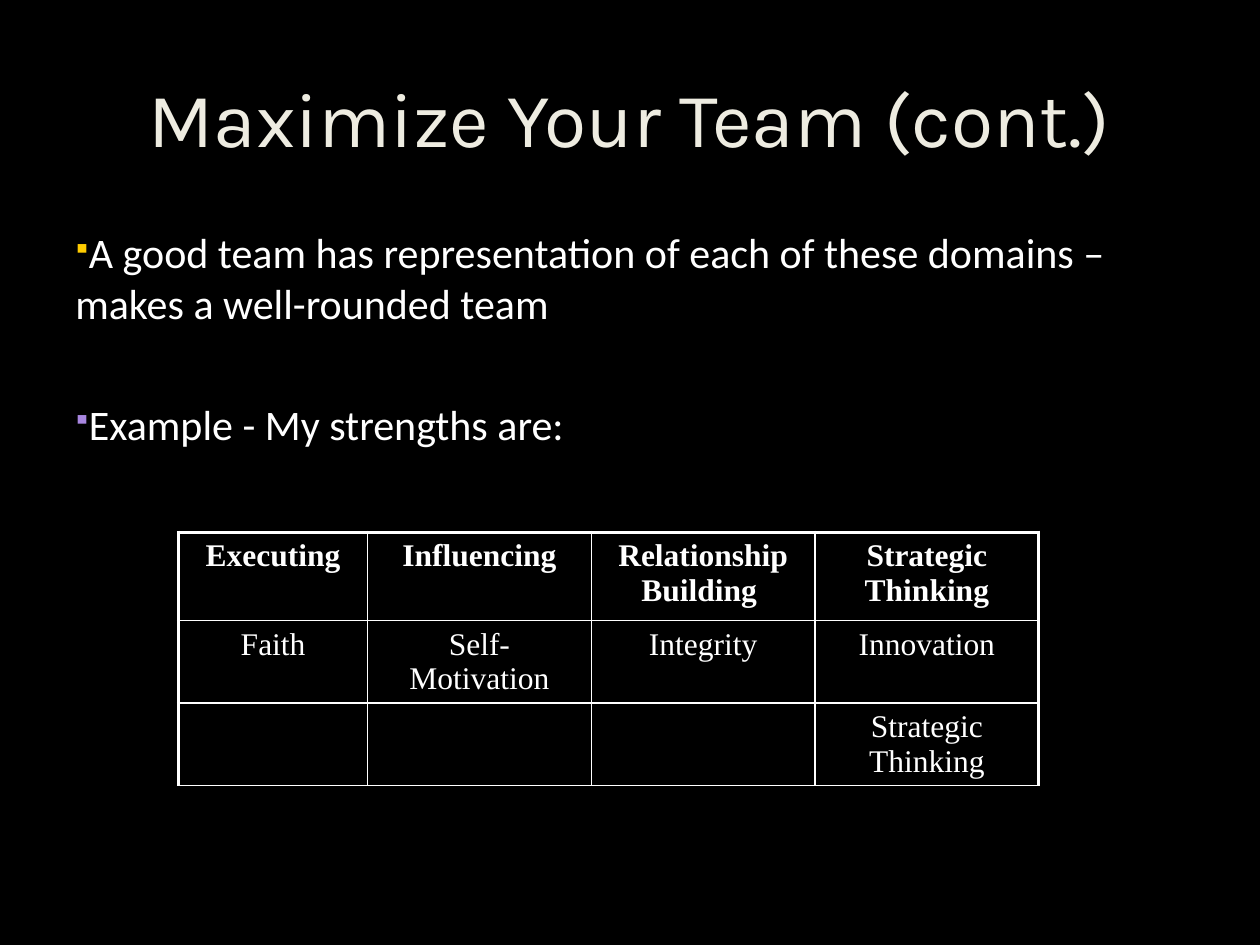
from lxml.etree import SubElement as Sub
from pptx import Presentation
from pptx.dml.color import RGBColor
from pptx.enum.text import MSO_ANCHOR as Anchor, PP_ALIGN as Align
from pptx.oxml.ns import qn
from pptx.util import Cm, Pt

BLACK = RGBColor(0, 0, 0)
WHITE = RGBColor(255, 255, 255)
CREAM = RGBColor(0xEE, 0xEC, 0xE1)
GOLD = RGBColor(0xFF, 0xCC, 0x00)
LILAC = RGBColor(0xA8, 0x86, 0xE0)

POINTS = [
    ("A good team has representation of each of these domains – makes a well-rounded team", GOLD, 0),
    ("Example - My strengths are:", LILAC, 40.5),
]
ROWS = [
    ["Executing", "Influencing", "Relationship Building ", "Strategic Thinking"],
    ["Faith", "Self-Motivation", "Integrity", "Innovation"],
    ["", "", "", "Strategic Thinking"],
]


class Deck:
    """Hold the style and the current slide, and add each kind of element."""

    def __init__(self):
        self.show = Presentation()
        self.show.slide_width, self.show.slide_height = Cm(25.4), Cm(19.05)
        self.slide = self.show.slides.add_slide(self.show.slide_layouts[6])
        fill = self.slide.background.fill
        fill.solid()
        fill.fore_color.rgb = BLACK

    def style(self, para, face, size, color, bold=False):
        for item in (para, *para.runs):
            font = item.font
            font.name, font.size, font.bold = face, Pt(size), bold
            font.color.rgb = color

    def box(self, left, top, width, height, anchor):
        x, y, right, base = Cm(left), Cm(top), Cm(left + width), Cm(top + height)
        pen = self.slide.shapes.build_freeform(x, y)
        pen.add_line_segments([(right, y), (right, base), (x, base)], close=True)
        shape = pen.convert_to_shape()
        shape.shadow.inherit = False
        shape.fill.background()
        shape.line.fill.background()
        frame = shape.text_frame
        frame.word_wrap = True
        frame.vertical_anchor = anchor
        return frame

    def title(self, text, *place):
        frame = self.box(*place, Anchor.MIDDLE)
        frame.text = text
        para = frame.paragraphs[0]
        para.alignment = Align.CENTER
        self.style(para, "Karla", 44, CREAM)

    def bullet(self, para, color):
        props = para._p.get_or_add_pPr()
        props.set("marL", "0")
        props.set("indent", "0")
        tint = Sub(props, qn("a:buClr"))
        Sub(tint, qn("a:srgbClr"), val=str(color))
        Sub(props, qn("a:buSzPct"), val="70000")
        Sub(props, qn("a:buFont"), typeface="Wingdings", charset="2")
        Sub(props, qn("a:buChar"), char="§")

    def points(self, items, *place):
        frame = self.box(*place, Anchor.TOP)
        for i, (text, color, gap) in enumerate(items):
            para = frame.add_paragraph() if i else frame.paragraphs[0]
            para.text = text
            para.alignment = Align.LEFT
            para.space_before = Pt(gap)
            self.bullet(para, color)
            self.style(para, "Calibri", 24, WHITE)

    def border(self, cell, sides):
        props = cell._tc.get_or_add_tcPr()
        for side, width in sides.items():
            line = Sub(props, qn(f"a:ln{side}"), w=str(Pt(width)))
            Sub(Sub(line, qn("a:solidFill")), qn("a:srgbClr"), val=str(WHITE))

    def table(self, rows, left, top, widths, heights):
        table = self.slide.shapes.add_table(
            len(rows), len(widths), Cm(left), Cm(top), Cm(sum(widths)), Cm(sum(heights))
        ).table
        table.first_row = table.horz_banding = False
        for col, width in zip(table.columns, widths):
            col.width = Cm(width)
        for row, height in zip(table.rows, heights):
            row.height = Cm(height)
        thick, thin, last = 2.25, 1, len(widths) - 1
        for r, texts in enumerate(rows):
            for c, text in enumerate(texts):
                cell = table.cell(r, c)
                cell.text_frame.text = text
                para = cell.text_frame.paragraphs[0]
                para.alignment = Align.CENTER
                self.style(para, "Times New Roman", 18, WHITE, r == 0)
                self.border(cell, {
                    "L": thin if c else thick,
                    "R": thick if c == last else thin,
                    "T": thin if r else thick,
                    "B": thin,
                })
                cell.fill.background()


def main():
    deck = Deck()
    deck.title("Maximize Your Team (cont.)", 1.27, 0.76, 22.86, 3.18)
    deck.points(POINTS, 1.27, 4.45, 23.29, 12.57)
    deck.table(ROWS, 3.6, 10.73, [3.81] + [4.51] * 3, [1.78, 1.66, 1.66])
    deck.show.save("out.pptx")


if __name__ == "__main__":
    main()
